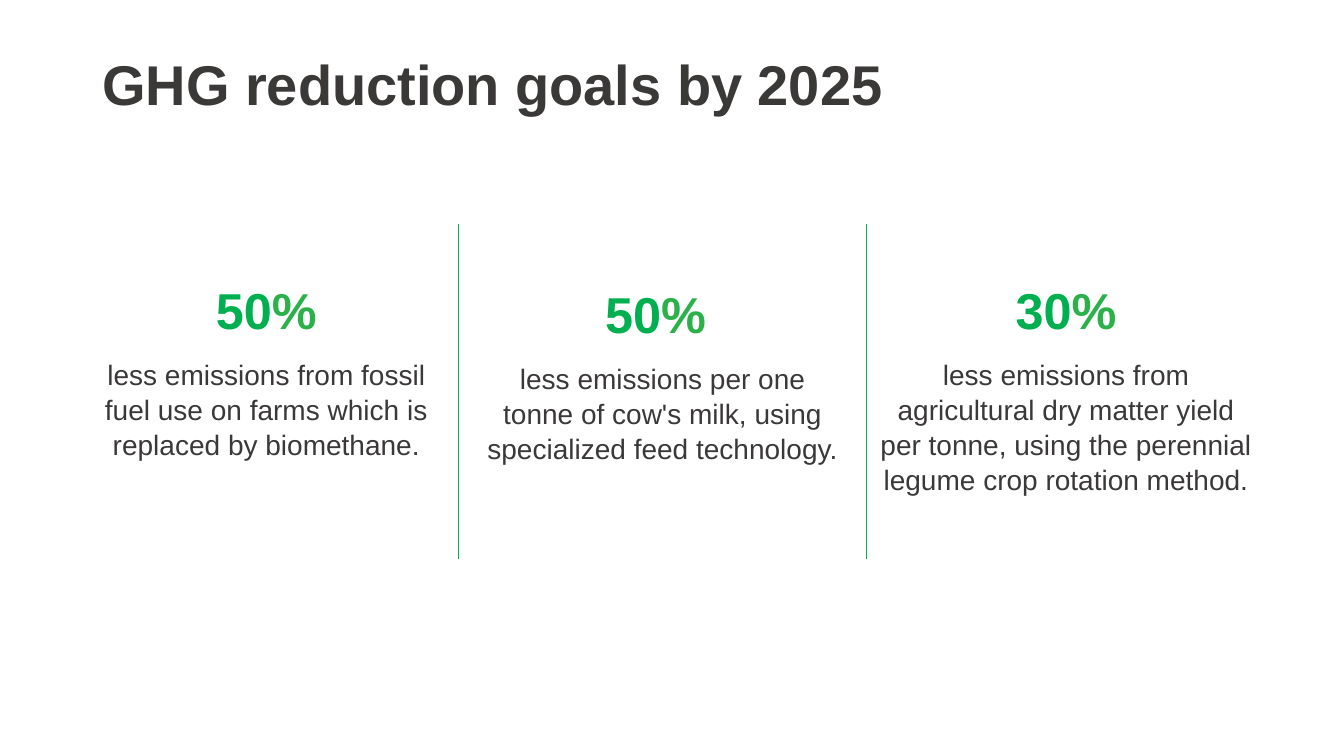
from lxml import etree
from pptx import Presentation
from pptx.dml.color import RGBColor
from pptx.enum.shapes import MSO_CONNECTOR
from pptx.enum.text import MSO_ANCHOR, PP_ALIGN
from pptx.oxml.ns import qn
from pptx.util import Pt

FONT = "Arial"
GREEN = "00B050"
LIGHT_GREEN = "2BB14A"
DARK_GREY = "3B3838"

# Left, top, width and height in points, then figure, unit and description
GOALS = [
    ((55.5, 193, 269.5, 215), "50", "%",
     "less emissions from fossil fuel use on farms which is replaced by biomethane."),
    ((338.5, 196, 269.5, 207), "50", "% ",
     "less emissions per one tonne of cow's milk, using specialized feed technology."),
    ((619, 193, 285, 207), "30", "%",
     "less emissions from agricultural dry matter yield per tonne, "
     "using the perennial legume crop rotation method."),
]
DIVIDERS = [327.5, 619]


def color(value):
    return RGBColor.from_string(value)


def add_box(page, left, top, width, height, margin_top):
    box = page.shapes.add_textbox(Pt(left), Pt(top), Pt(width), Pt(height))
    frame = box.text_frame
    frame.word_wrap = True
    frame.vertical_anchor = MSO_ANCHOR.TOP
    frame.margin_top = Pt(margin_top)
    return frame


def add_span(paragraph, text, size, fill, bold):
    span = paragraph.add_run()
    span.text = text
    span.font.name = FONT
    span.font.size = Pt(size)
    span.font.bold = bold
    span.font.color.rgb = color(fill)


def add_title(page, text):
    frame = add_box(page, 66, 34, 828, 88.5, 6.5)
    paragraph = frame.paragraphs[0]
    paragraph.line_spacing = 0.9
    add_span(paragraph, text, 40, DARK_GREY, True)


def add_goal(page, place, figure, unit, description):
    frame = add_box(page, *place, 4.5)
    headline, body = frame.paragraphs[0], frame.add_paragraph()
    for paragraph in (headline, body):
        paragraph.alignment = PP_ALIGN.CENTER
        paragraph.space_after = Pt(12)
        paragraph.line_spacing = 1.04
    add_span(headline, figure, 36, GREEN, True)
    add_span(headline, unit, 36, LIGHT_GREEN, True)
    add_span(body, description, 20, DARK_GREY, False)


def add_divider(page, left):
    divider = page.shapes.add_connector(
        MSO_CONNECTOR.STRAIGHT, Pt(left), Pt(160), Pt(left), Pt(399))
    divider.line.color.rgb = color(GREEN)
    divider.line.width = Pt(1)
    etree.SubElement(divider._element.spPr, qn("a:effectLst"))


def main():
    deck = Presentation()
    deck.slide_width, deck.slide_height = Pt(960), Pt(540)
    page = deck.slides.add_slide(deck.slide_layouts[6])
    add_title(page, "GHG reduction goals by 2025")
    for goal in GOALS:
        add_goal(page, *goal)
    for left in DIVIDERS:
        add_divider(page, left)
    deck.save("out.pptx")


if __name__ == "__main__":
    main()
